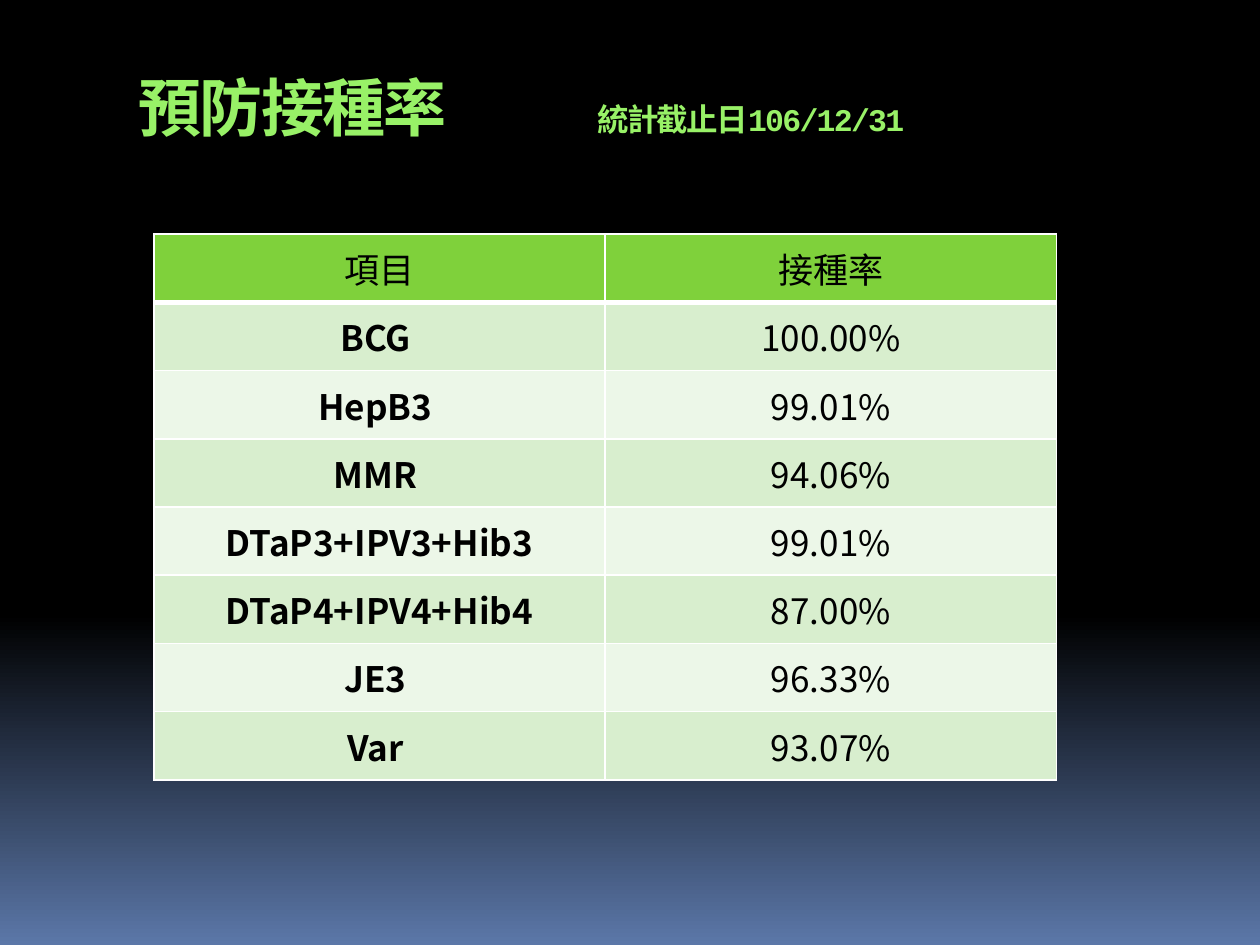
from lxml.etree import SubElement
from pptx import Presentation
from pptx.dml.color import RGBColor
from pptx.enum.text import MSO_ANCHOR as Anchor, PP_ALIGN as Align
from pptx.oxml.ns import qn
from pptx.util import Cm, Pt

BLACK = RGBColor(0x00, 0x00, 0x00)
DUSK_BLUE = RGBColor(0x5B, 0x77, 0xA8)
LIME = RGBColor(0x98, 0xF1, 0x67)
HEADER_GREEN = RGBColor(0x7F, 0xD1, 0x3B)
BAND_GREENS = (RGBColor(0xD8, 0xEE, 0xCE), RGBColor(0xEC, 0xF7, 0xE8))
WHITE = RGBColor(0xFF, 0xFF, 0xFF)

RATES = [
    ("項目", "接種率"),
    ("BCG ", "100.00%"),
    ("HepB3 ", "99.01%"),
    ("MMR ", "94.06%"),
    ("DTaP3+IPV3+Hib3", "99.01%"),
    ("DTaP4+IPV4+Hib4", "87.00%"),
    ("JE3 ", "96.33%"),
    ("Var ", "93.07%"),
]


class SlideBuilder:
    title_font = "Courier New"
    body_font = "Noto Sans CJK SC"

    def __init__(self, slide):
        self.slide = slide

    def background(self, stops):
        fill = self.slide.background.fill
        fill.gradient()
        fill.gradient_angle = 270
        for stop, (position, color) in zip(fill.gradient_stops, stops):
            stop.position = position
            stop.color.rgb = color

    def run(self, paragraph, text, color, **format_values):
        run = paragraph.add_run()
        run.text = text
        run.font.color.rgb = color
        for name, value in format_values.items():
            setattr(run.font, name, value)
        # East Asian glyphs take their own typeface
        SubElement(run.font._element, qn("a:ea"), typeface=self.body_font)
        return run

    def title(self, left, top, width, height, parts, tab):
        shape = self.slide.shapes.title
        place = {"left": left, "top": top, "width": width, "height": height}
        for name, value in place.items():
            setattr(shape, name, value)
        frame = shape.text_frame
        frame.vertical_anchor = Anchor.TOP
        frame.word_wrap = True
        paragraph = frame.paragraphs[0]
        paragraph.alignment = Align.LEFT
        paragraph.line_spacing = 0.9
        for text, size in parts:
            run = self.run(paragraph, text, LIME, name=self.title_font,
                           size=size, bold=True)
            run.font._element.set("spc", "-100")
        tabs = SubElement(paragraph._p.get_or_add_pPr(), qn("a:tabLst"))
        SubElement(tabs, qn("a:tab"), pos=str(tab), algn="l")

    def cell(self, cell, text, fill, bold, borders):
        # Borders come before the fill in the cell properties
        properties = cell._tc.get_or_add_tcPr()
        for side, width in borders.items():
            line = SubElement(properties, qn(f"a:ln{side}"), w=str(Pt(width)))
            solid = SubElement(line, qn("a:solidFill"))
            SubElement(solid, qn("a:srgbClr"), val=str(WHITE))
        cell.fill.solid()
        cell.fill.fore_color.rgb = fill
        cell.vertical_anchor = Anchor.MIDDLE
        paragraph = cell.text_frame.paragraphs[0]
        paragraph.alignment = Align.CENTER
        self.run(paragraph, text, BLACK, name=self.body_font,
                 size=Pt(20), bold=bold)

    def table(self, left, top, width, height, rows):
        table = self.slide.shapes.add_table(
            len(rows), len(rows[0]), left, top, width, height).table
        for r, row in enumerate(rows):
            fill = BAND_GREENS[(r - 1) % 2] if r else HEADER_GREEN
            borders = {"L": 1, "R": 1, "T": 3 if r == 1 else 1,
                       "B": 3 if r == 0 else 1}
            for c, text in enumerate(row):
                self.cell(table.cell(r, c), text, fill,
                          bold=r > 0 and c == 0, borders=borders)


def main():
    presentation = Presentation()
    presentation.slide_width = Cm(25.4)
    presentation.slide_height = Cm(19.05)
    builder = SlideBuilder(
        presentation.slides.add_slide(presentation.slide_layouts[5]))

    # Night-sky background
    builder.background([(0.65, BLACK), (1.0, DUSK_BLUE)])

    # Title with the cut-off date at a tab stop
    builder.title(Cm(2.54), Cm(1.42), Cm(21.59), Cm(2.54),
                  [("預防接種率\t", Pt(36)), ("統計截止日106/12/31", Pt(18))],
                  tab=Cm(9.25))

    # Vaccination rates
    builder.table(Cm(3.1), Cm(4.72), Cm(18.2), Cm(11), RATES)

    presentation.save("out.pptx")


if __name__ == "__main__":
    main()
